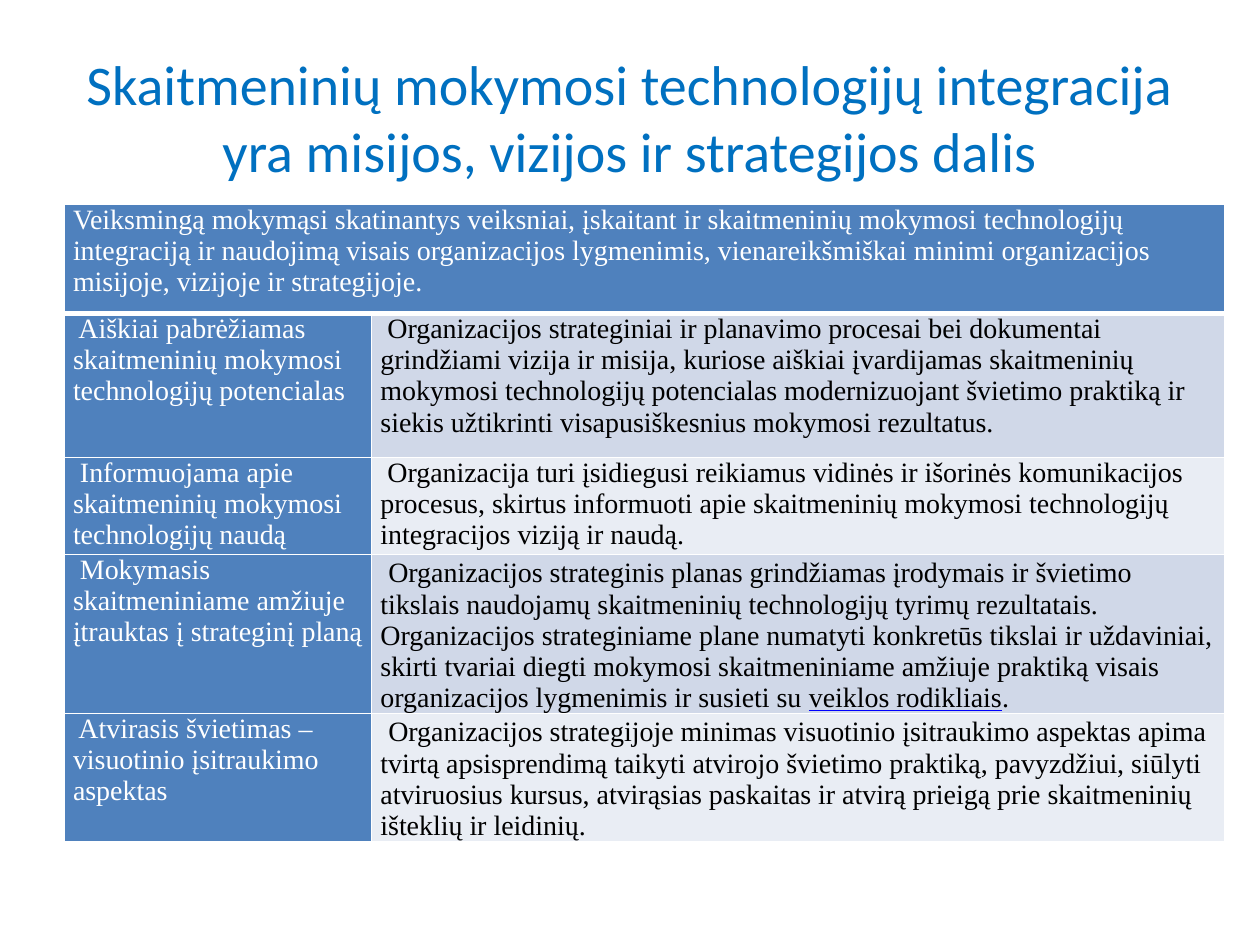
import pptx
import pptx.dml.color
import pptx.enum.text
import pptx.oxml
import pptx.oxml.ns
import pptx.util
from dataclasses import dataclass
from lxml import etree

Inches = pptx.util.Inches
Pt = pptx.util.Pt
qn = pptx.oxml.ns.qn


@dataclass(frozen=True)
class Theme:
    title_font: str = "Calibri"
    table_font: str = "Times New Roman"
    title_size: int = 32
    text_size: int = 16
    indent_size: int = 18
    title: str = "0070C0"
    header: str = "4F81BD"
    bands: tuple = ("D0D8E8", "E9EDF4")
    light: str = "FFFFFF"
    dark: str = "000000"
    link: str = "0000FF"
    thin_border: int = 1
    thick_border: int = 3


THEME = Theme()
TITLE = "Skaitmeninių mokymosi technologijų integracija yra misijos, vizijos ir strategijos dalis"
HEADING = (
    "Veiksmingą mokymąsi skatinantys veiksniai, įskaitant ir skaitmeninių mokymosi "
    "technologijų integraciją ir naudojimą visais organizacijos lygmenimis, "
    "vienareikšmiškai minimi organizacijos misijoje, vizijoje ir strategijoje."
)
UNDERLINED = "veiklos rodikliais"
LEAD = " "  # no-break space that opens every body cell
# label, description, size of the leading space
ROWS = [
    ("Aiškiai pabrėžiamas skaitmeninių mokymosi technologijų potencialas",
     "Organizacijos strateginiai ir planavimo procesai bei dokumentai grindžiami vizija ir "
     "misija, kuriose aiškiai įvardijamas skaitmeninių mokymosi technologijų potencialas "
     "modernizuojant švietimo praktiką ir siekis užtikrinti visapusiškesnius mokymosi rezultatus.",
     THEME.text_size),
    ("Informuojama apie skaitmeninių mokymosi technologijų naudą",
     "Organizacija turi įsidiegusi reikiamus vidinės ir išorinės komunikacijos procesus, "
     "skirtus informuoti apie skaitmeninių mokymosi technologijų integracijos viziją ir naudą.",
     THEME.text_size),
    ("Mokymasis skaitmeniniame amžiuje įtrauktas į strateginį planą",
     "Organizacijos strateginis planas grindžiamas įrodymais ir švietimo tikslais naudojamų "
     "skaitmeninių technologijų tyrimų rezultatais. Organizacijos strateginiame plane numatyti "
     "konkretūs tikslai ir uždaviniai, skirti tvariai diegti mokymosi skaitmeniniame amžiuje "
     "praktiką visais organizacijos lygmenimis ir susieti su veiklos rodikliais.",
     THEME.indent_size),
    ("Atvirasis švietimas – visuotinio įsitraukimo aspektas",
     "Organizacijos strategijoje minimas visuotinio įsitraukimo aspektas apima tvirtą "
     "apsisprendimą taikyti atvirojo švietimo praktiką, pavyzdžiui, siūlyti atviruosius kursus, "
     "atvirąsias paskaitas ir atvirą prieigą prie skaitmeninių išteklių ir leidinių.",
     THEME.indent_size),
]
COLUMN_WIDTHS = (2.44, 6.77)
ROW_HEIGHTS = (0.87, 1.14, 0.77, 1.21, 0.87)


def rgb(value):
    return pptx.dml.color.RGBColor.from_string(value)


def set_attributes(target, values):
    for name, value in values.items():
        setattr(target, name, value)


def add_run(paragraph, text, color, size=THEME.text_size, font=THEME.table_font):
    run = paragraph.add_run()
    run.text = text
    set_attributes(run.font, {"name": font, "size": Pt(size), "bold": False})
    run.font.color.rgb = rgb(color)
    return run


def add_solid_fill(parent, color):
    fill = etree.SubElement(parent, qn("a:solidFill"))
    etree.SubElement(fill, qn("a:srgbClr"), val=color)


def underline(run, color):
    """Underline a run in a colour other than that of its text."""
    run.font.underline = True
    properties = run.font._element if hasattr(run.font, "_element") else run._r.get_or_add_rPr()
    underline_fill = pptx.oxml.parse_xml(
        f'<a:uFill {pptx.oxml.ns.nsdecls("a")}/>')
    add_solid_fill(underline_fill, color)
    properties.find(qn("a:latin")).addprevious(underline_fill)


def add_borders(cell, widths):
    properties = cell._tc.get_or_add_tcPr()
    for side, width in widths.items():
        line = etree.SubElement(properties, qn(f"a:ln{side}"), w=str(Pt(width)))
        add_solid_fill(line, THEME.light)


def format_cell(cell, fill, top=THEME.thin_border, bottom=THEME.thin_border):
    """Set margins, borders and fill, and return the cell's paragraph."""
    side = THEME.thin_border
    add_borders(cell, {"L": side, "R": side, "T": top, "B": bottom})
    cell.fill.solid()
    cell.fill.fore_color.rgb = rgb(fill)
    set_attributes(cell, {
        "margin_left": Inches(0.07), "margin_right": Inches(0.07),
        "margin_top": 0, "margin_bottom": 0,
        "vertical_anchor": pptx.enum.text.MSO_ANCHOR.TOP,
    })
    paragraph = cell.text_frame.paragraphs[0]
    paragraph.space_before = Pt(6)
    return paragraph


def place_title(slide, left, top, width, height):
    title = slide.shapes.title
    set_attributes(title, {"left": left, "top": top, "width": width, "height": height})
    set_attributes(title.text_frame, {
        "word_wrap": True, "vertical_anchor": pptx.enum.text.MSO_ANCHOR.MIDDLE})
    paragraph = title.text_frame.paragraphs[0]
    paragraph.alignment = pptx.enum.text.PP_ALIGN.CENTER
    add_run(paragraph, TITLE, THEME.title, THEME.title_size, THEME.title_font)


def fill_description(paragraph, text, lead_size):
    add_run(paragraph, LEAD, THEME.dark, lead_size)
    before, marked, after = text.partition(UNDERLINED)
    add_run(paragraph, before, THEME.dark)
    if marked:
        underline(add_run(paragraph, marked, THEME.dark), THEME.link)
        add_run(paragraph, after, THEME.dark)


def place_table(slide, left, top, width, height):
    table = slide.shapes.add_table(
        len(ROW_HEIGHTS), len(COLUMN_WIDTHS), left, top, width, height).table
    for column, share in zip(table.columns, COLUMN_WIDTHS):
        column.width = int(width * share / sum(COLUMN_WIDTHS))
    for row, share in zip(table.rows, ROW_HEIGHTS):
        row.height = int(height * share / sum(ROW_HEIGHTS))

    table.cell(0, 0).merge(table.cell(0, 1))
    for cell in table.rows[0].cells:
        paragraph = format_cell(cell, THEME.header, bottom=THEME.thick_border)
        if not cell.is_spanned:
            add_run(paragraph, HEADING, THEME.light)

    for index, (label, description, lead_size) in enumerate(ROWS):
        label_cell, description_cell = table.rows[index + 1].cells
        top_border = THEME.thin_border if index else THEME.thick_border
        add_run(format_cell(label_cell, THEME.header, top_border), LEAD + label, THEME.light)
        band = THEME.bands[index % len(THEME.bands)]
        fill_description(format_cell(description_cell, band, top_border), description, lead_size)


def main():
    presentation = pptx.Presentation()
    set_attributes(presentation, {"slide_width": Inches(10), "slide_height": Inches(7.5)})
    slide = presentation.slides.add_slide(presentation.slide_layouts.get_by_name("Title Only"))
    place_title(slide, Inches(0.5), Inches(0.3), Inches(9), Inches(1.25))
    place_table(slide, Inches(0.51), Inches(1.62),
                Inches(sum(COLUMN_WIDTHS)), Inches(sum(ROW_HEIGHTS)))
    presentation.save("out.pptx")


if __name__ == "__main__":
    main()
